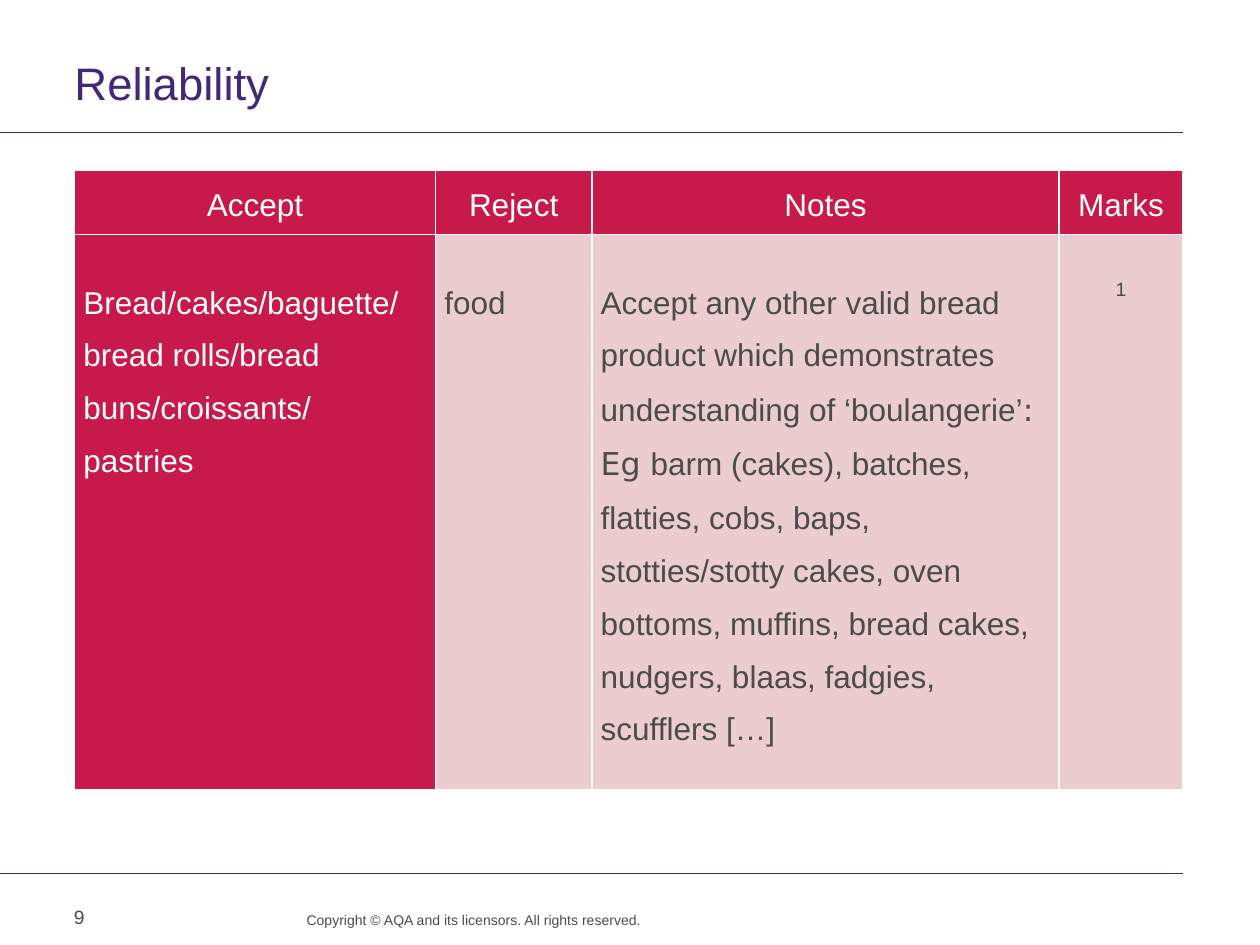
from dataclasses import dataclass

from lxml import etree
from pptx import Presentation
from pptx.dml.color import RGBColor
from pptx.enum.shapes import MSO_CONNECTOR
from pptx.enum.text import MSO_ANCHOR, PP_ALIGN
from pptx.oxml.ns import qn
from pptx.util import Cm, Pt

LEFT, CENTER, RIGHT = PP_ALIGN.LEFT, PP_ALIGN.CENTER, PP_ALIGN.RIGHT
TOP, MIDDLE = MSO_ANCHOR.TOP, MSO_ANCHOR.MIDDLE
STRAIGHT = MSO_CONNECTOR.STRAIGHT
TITLE_ONLY = 5


@dataclass(frozen=True)
class Theme:
    purple: str = "412878"
    crimson: str = "C8194B"
    pink: str = "EBCCD0"
    grey: str = "4B4B4B"
    white: str = "FFFFFF"
    font: str = "Arial"
    symbol_font: str = "DejaVu Sans"
    title_size: int = 26
    table_size: int = 18
    small_size: int = 11
    footer_size: int = 8


THEME = Theme()
MARGIN, RIGHT_EDGE = 1.5, 23.85
COLUMN_WIDTHS = (7.28, 3.15, 9.42, 2.5)
ROW_HEIGHTS = (1.3, 11.2)
BODY_TOP_INSET = 0.67

# Table content: each cell is a list of paragraphs, each paragraph a list of (text, font)
HEADERS = ("Accept", "Reject", "Notes", "Marks")
ACCEPT = [[("Bread/cakes/baguette/ bread rolls/bread buns/croissants/ pastries", THEME.font)]]
REJECT = [[("food", THEME.font)]]
NOTES = [
    [("Accept any other valid bread product which demonstrates "
      "understanding of ‘boulangerie’", THEME.font), (":", THEME.symbol_font)],
    [("Eg ", THEME.symbol_font),
     ("barm (cakes), batches, flatties, cobs, baps, stotties/stotty cakes, oven bottoms, "
      "muffins, bread cakes, nudgers, blaas, fadgies, scufflers […]", THEME.font)],
]
MARKS = [[("1", THEME.font)]]


def color(value):
    return RGBColor.from_string(value)


def write(text_frame, paragraphs, size, text_color, align=LEFT, spacing=None):
    text_frame.word_wrap = True
    for index, runs in enumerate(paragraphs):
        paragraph = text_frame.add_paragraph() if index else text_frame.paragraphs[0]
        paragraph.alignment = align
        paragraph.line_spacing = spacing
        for text, font_name in runs:
            run = paragraph.add_run()
            run.text = text
            run.font.name = font_name
            run.font.size = Pt(size)
            run.font.bold = False
            run.font.color.rgb = color(text_color)


def set_insets(text_holder, left, top, right, bottom):
    text_holder.margin_left, text_holder.margin_top = Cm(left), Cm(top)
    text_holder.margin_right, text_holder.margin_bottom = Cm(right), Cm(bottom)


def add_rule(slide, top):
    line = slide.shapes.add_connector(STRAIGHT, Cm(0), Cm(top), Cm(RIGHT_EDGE), Cm(top))
    line.line.color.rgb = color(THEME.purple)
    line.line.width = Pt(0.6)
    etree.SubElement(line._element.spPr, qn("a:effectLst"))


def format_title(slide, text):
    title = slide.shapes.title
    title.left, title.top = Cm(MARGIN), Cm(1.22)
    title.width, title.height = Cm(RIGHT_EDGE - MARGIN), Cm(1.19)
    frame = title.text_frame
    frame.vertical_anchor = TOP
    set_insets(frame, 0, 0, 0.25, 0)
    write(frame, [[(text, THEME.font)]], THEME.title_size, THEME.purple, spacing=Pt(28))


def add_text(slide, box, text, size, align=LEFT, anchor=TOP, spacing=None, insets=None):
    frame = slide.shapes.add_textbox(*map(Cm, box)).text_frame
    frame.vertical_anchor = anchor
    if insets:
        set_insets(frame, *insets)
    write(frame, [[(text, THEME.font)]], size, THEME.grey, align, spacing)


def set_borders(cell):
    properties = cell._tc.get_or_add_tcPr()
    for index, side in enumerate(("a:lnL", "a:lnR", "a:lnT", "a:lnB")):
        line = etree.Element(qn(side), w=str(Pt(1)))
        fill = etree.SubElement(line, qn("a:solidFill"))
        etree.SubElement(fill, qn("a:srgbClr"), val=THEME.white)
        properties.insert(index, line)


def fill_cell(cell, paragraphs, fill, text_color, size=THEME.table_size, align=LEFT, top=0):
    cell.fill.solid()
    cell.fill.fore_color.rgb = color(fill)
    set_borders(cell)
    set_insets(cell, 0.18, top, 0.18, 0)
    write(cell.text_frame, paragraphs, size, text_color, align, 1.5)


def add_marking_table(slide):
    frame = slide.shapes.add_table(
        len(ROW_HEIGHTS), len(COLUMN_WIDTHS), Cm(MARGIN), Cm(3.43),
        Cm(sum(COLUMN_WIDTHS)), Cm(sum(ROW_HEIGHTS)))
    table = frame.table
    table.first_row = table.horz_banding = False
    for column, width in zip(table.columns, COLUMN_WIDTHS):
        column.width = Cm(width)
    for row, height in zip(table.rows, ROW_HEIGHTS):
        row.height = Cm(height)

    # Header row
    for index, header in enumerate(HEADERS):
        fill_cell(table.cell(0, index), [[(header, THEME.font)]],
                  THEME.crimson, THEME.white, align=CENTER)

    # Answer row
    answers = (
        (ACCEPT, THEME.crimson, THEME.white, THEME.table_size, LEFT),
        (REJECT, THEME.pink, THEME.grey, THEME.table_size, LEFT),
        (NOTES, THEME.pink, THEME.grey, THEME.table_size, LEFT),
        (MARKS, THEME.pink, THEME.grey, THEME.small_size, CENTER),
    )
    for index, answer in enumerate(answers):
        fill_cell(table.cell(1, index), *answer, top=BODY_TOP_INSET)


def main():
    presentation = Presentation()
    presentation.slide_width, presentation.slide_height = Cm(25.4), Cm(19.05)
    slide = presentation.slides.add_slide(presentation.slide_layouts[TITLE_ONLY])

    # Rules and title
    for top in (2.67, 17.6):
        add_rule(slide, top)
    format_title(slide, "Reliability")

    add_marking_table(slide)

    # Footer
    add_text(slide, (1.24, 17.98, 1.93, 1.02), "9", THEME.small_size, anchor=MIDDLE)
    add_text(slide, (4.24, 18.36, 8.69, 0.66),
             "Copyright © AQA and its licensors. All rights reserved.",
             THEME.footer_size, RIGHT, spacing=Pt(10), insets=(0, 0, 0, 0))

    presentation.save("out.pptx")


if __name__ == "__main__":
    main()
